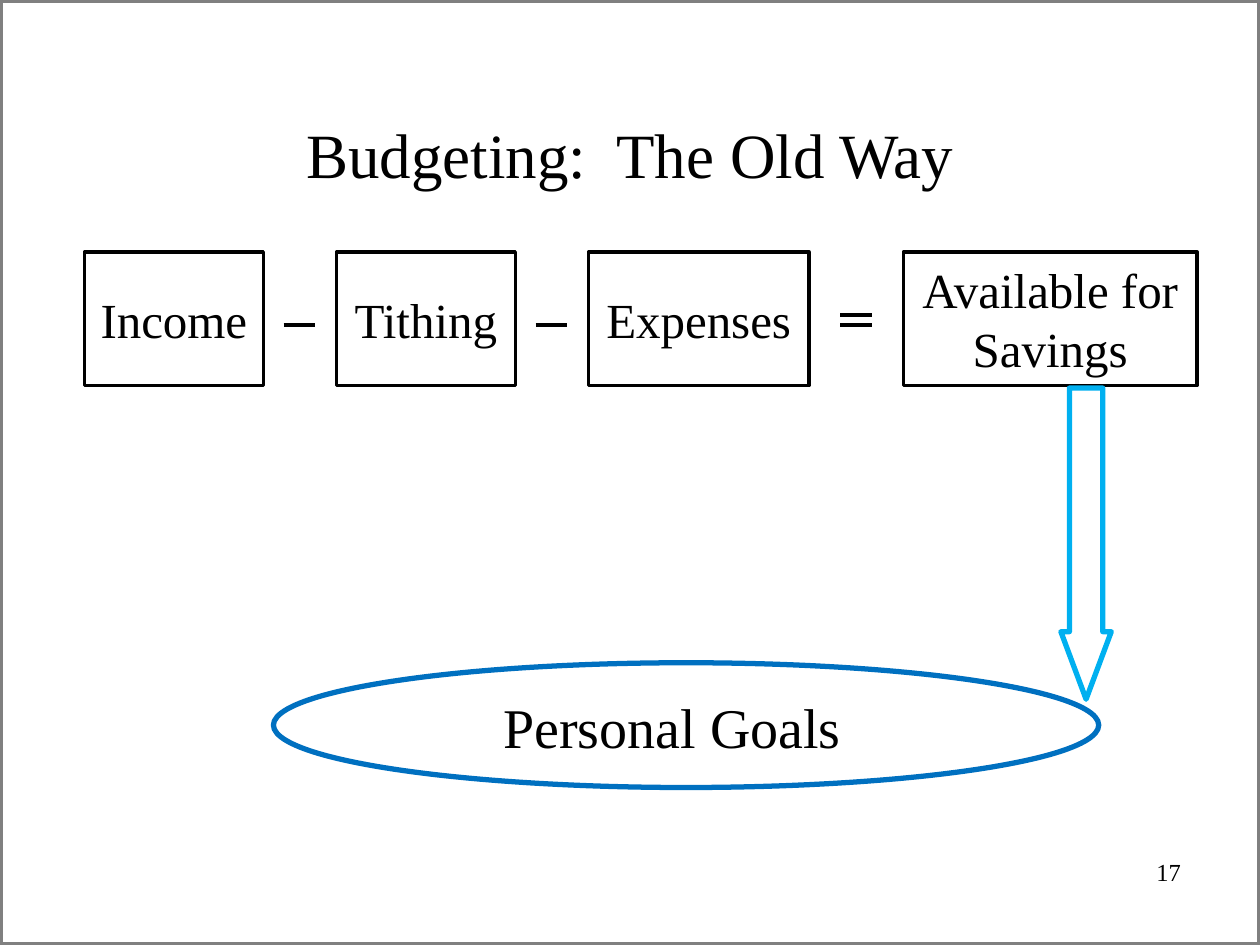
from lxml import etree
from pptx import Presentation
from pptx.dml.color import RGBColor
from pptx.enum.shapes import MSO_CONNECTOR, MSO_SHAPE
from pptx.enum.text import MSO_ANCHOR, PP_ALIGN
from pptx.oxml.ns import qn
from pptx.util import Inches, Pt

RECTANGLE, ELLIPSE, DOWN_ARROW = MSO_SHAPE.RECTANGLE, MSO_SHAPE.OVAL, MSO_SHAPE.DOWN_ARROW
STRAIGHT = MSO_CONNECTOR.STRAIGHT
TOP, MIDDLE = MSO_ANCHOR.TOP, MSO_ANCHOR.MIDDLE
LEFT, CENTER = PP_ALIGN.LEFT, PP_ALIGN.CENTER

FONT = "Times New Roman"
COLORS = {"text": "000000", "frame": "808080", "goal": "0070C0", "arrow": "00B0F0"}


def color(name):
    """Return the named color."""
    return RGBColor.from_string(COLORS[name])


def write_text(shape, text, size=28, align=CENTER, anchor=MIDDLE):
    """Write one formatted paragraph in a shape."""
    frame = shape.text_frame
    frame.word_wrap = True
    frame.vertical_anchor = anchor
    paragraph = frame.paragraphs[0]
    paragraph.text = text
    paragraph.alignment = align
    paragraph.font.name = FONT
    paragraph.font.size = Pt(size)
    paragraph.font.color.rgb = color("text")


def add_outline(slide, kind, box, line, width):
    """Add an unfilled shape in the given box."""
    shape = slide.shapes.add_shape(kind, *map(Inches, box))
    shape.shadow.inherit = False
    shape.fill.background()
    shape.line.color.rgb = color(line)
    shape.line.width = Pt(width)
    return shape


def add_text_box(slide, box, text, **text_format):
    """Add a text box with formatted text."""
    write_text(slide.shapes.add_textbox(*map(Inches, box)), text, **text_format)


def add_stroke(slide, left, top, length=0.25):
    """Draw one horizontal stroke of an operator."""
    line = slide.shapes.add_connector(
        STRAIGHT, Inches(left), Inches(top), Inches(left + length), Inches(top))
    line.line.color.rgb = color("text")
    line.line.width = Pt(2)
    etree.SubElement(line._element.spPr, qn("a:effectLst"))


def add_title(slide, box, text):
    """Place and fill the title placeholder."""
    title = slide.shapes.title
    title.left, title.top, title.width, title.height = map(Inches, box)
    write_text(title, text, size=36)


def add_equation(slide, top, height):
    """Draw the budget terms and the operators between them."""
    terms = [
        ("Income", 0.67, 1.42),
        ("Tithing", 2.67, 1.42),
        ("Expenses", 4.67, 1.75),
        ("Available for Savings", 7.17, 2.33),
    ]
    for text, left, width in terms:
        term = add_outline(slide, RECTANGLE, (left, top, width, height), "text", 2)
        write_text(term, text)
    for left, offsets in [(2.25, [0.58]), (4.25, [0.58]), (6.67, [0.5, 0.58])]:
        for offset in offsets:
            add_stroke(slide, left, top + offset)


def add_goal(slide, box):
    """Draw the goal ellipse with its label."""
    left, top, width, height = box
    add_outline(slide, ELLIPSE, box, "goal", 3)
    add_text_box(slide, (left + 1.33, top + 0.19, 3.67, 0.63), "Personal Goals", size=32)


def add_arrow(slide, box):
    """Draw the block arrow from savings to the goal."""
    arrow = add_outline(slide, DOWN_ARROW, box, "arrow", 3)
    arrow.adjustments[0] = 0.66
    arrow.adjustments[1] = 1.34


def main():
    """Build and save the slide."""
    presentation = Presentation()
    presentation.slide_width, presentation.slide_height = Inches(10), Inches(7.5)
    slide = presentation.slides.add_slide(presentation.slide_layouts[5])
    add_outline(slide, RECTANGLE, (0, 0, 10, 7.5), "frame", 3)
    add_title(slide, (0.5, 0.59, 9, 1.25), "Budgeting:  The Old Way")
    add_equation(slide, 2, 1.06)
    add_goal(slide, (2.17, 5.26, 6.55, 0.99))
    add_arrow(slide, (8.42, 3.08, 0.4, 2.47))
    add_text_box(slide, (9.08, 6.75, 0.65, 0.5), "17", size=14, align=LEFT, anchor=TOP)
    presentation.save("out.pptx")


if __name__ == "__main__":
    main()
